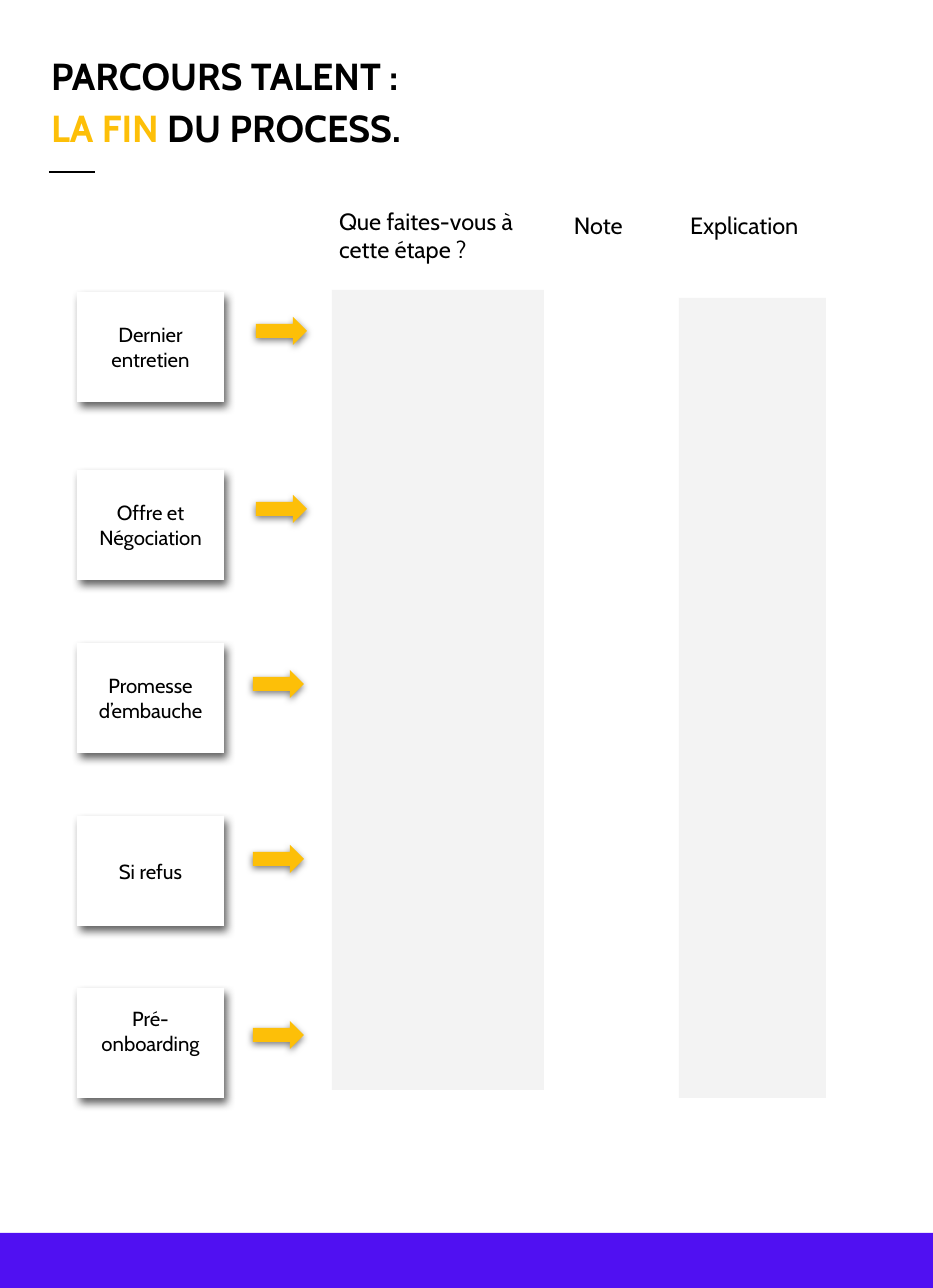
from lxml import etree
from pptx import Presentation
from pptx import util as u
from pptx.dml.color import RGBColor
from pptx.enum import shapes, text
from pptx.oxml import ns

BLACK = RGBColor(0x00, 0x00, 0x00)
WHITE = RGBColor(0xFF, 0xFF, 0xFF)
YELLOW = RGBColor(0xFD, 0xBF, 0x08)
GREY = RGBColor(0xF3, 0xF3, 0xF3)
VIOLET = RGBColor(0x50, 0x10, 0xF2)

PAGE_W, PAGE_H = 933, 1288
SCALE = 914400 / 112.8
INSET = 11
LINE = 24

TITLE = [
    [("PARCOURS TALENT :", BLACK)],
    [("LA FIN ", YELLOW), ("DU PROCESS.", BLACK)],
]
HEADINGS = [
    ("Que faites-vous à cette étape ?", (328, 196, 199, 55)),
    ("Note", (563, 200, 100, 55)),
    ("Explication", (679, 200, 199, 55)),
]
COLUMNS = [(332, 290, 212, 800), (679, 298, 147, 800)]
STEPS = [
    ("Dernier entretien", 292, (256, 317), 0),
    ("Offre et Négociation", 470, (256, 495), 0),
    ("Promesse d’embauche", 643, (253, 670), 0),
    ("Si refus", 816, (253, 845), 0),
    ("Pré-\vonboarding", 988, (253, 1021), LINE),
]
CARD_X, CARD_W, CARD_H = 77, 147, 110
ARROW_W, ARROW_H = 51, 28

CARD_SHADOW = dict(color="434343", alpha=84, blur=5.6, dist=3.8, angle=60)
ARROW_SHADOW = dict(color="000000", alpha=50, blur=4.5, dist=1.5, angle=90)


def px(n):
    return u.Emu(round(n * SCALE))


def assign(obj, values):
    for name, value in values.items():
        setattr(obj, name, value)


def add_shadow(sp, color, alpha, blur, dist, angle):
    effects = sp._element.spPr.find(ns.qn("a:effectLst"))
    outer = etree.SubElement(
        effects, ns.qn("a:outerShdw"), blurRad=str(u.Pt(blur)), dist=str(u.Pt(dist)),
        dir=str(angle * 60000), algn="bl", rotWithShape="0")
    clr = etree.SubElement(outer, ns.qn("a:srgbClr"), val=color)
    etree.SubElement(clr, ns.qn("a:alpha"), val=str(alpha * 1000))


def add_block(s, kind, box, fill, shadow=None):
    sp = s.shapes.add_shape(kind, *map(px, box))
    sp.shadow.inherit = False
    sp.fill.solid()
    sp.fill.fore_color.rgb = fill
    sp.line.fill.background()
    if shadow:
        add_shadow(sp, **shadow)
    return sp


def write(sp, lines, size, bold=False, align=text.PP_ALIGN.LEFT,
          anchor=text.MSO_ANCHOR.TOP, spacing=1.0, extra_bottom=0):
    tf = sp.text_frame
    assign(tf, dict(
        word_wrap=True, auto_size=text.MSO_AUTO_SIZE.NONE, vertical_anchor=anchor,
        margin_left=px(INSET), margin_right=px(INSET), margin_top=px(INSET),
        margin_bottom=px(INSET + extra_bottom)))
    for i, runs in enumerate(lines):
        p = tf.add_paragraph() if i else tf.paragraphs[0]
        assign(p, dict(alignment=align, line_spacing=spacing))
        for words, color in runs:
            for j, part in enumerate(words.split("\v")):
                if j:
                    p.add_line_break()
                r = p.add_run()
                r.text = part
                assign(r.font, dict(name="Cabin", size=u.Pt(size), bold=bold))
                r.font.color.rgb = color


def main():
    prs = Presentation()
    assign(prs, dict(slide_width=px(PAGE_W), slide_height=px(PAGE_H)))
    s = prs.slides.add_slide(prs.slide_layouts[5])
    rect, arrow = shapes.MSO_SHAPE.RECTANGLE, shapes.MSO_SHAPE.RIGHT_ARROW

    title = s.shapes.title
    assign(title, dict(left=px(40), top=px(35), width=px(809), height=px(110)))
    write(title, TITLE, 24, bold=True, spacing=1.15)

    rule = s.shapes.add_connector(
        shapes.MSO_CONNECTOR.STRAIGHT, px(49), px(172), px(95), px(172))
    rule.line.color.rgb = BLACK
    rule.line.width = u.Pt(0.75)
    etree.SubElement(rule._element.spPr, ns.qn("a:effectLst"))

    add_block(s, rect, (0, 1233, PAGE_W, PAGE_H - 1233), VIOLET)
    for box in COLUMNS:
        add_block(s, rect, box, GREY)
    for words, box in HEADINGS:
        write(s.shapes.add_textbox(*map(px, box)), [[(words, BLACK)]], 15)

    for words, top, arrow_at, extra in STEPS:
        card = add_block(s, rect, (CARD_X, top, CARD_W, CARD_H), WHITE, CARD_SHADOW)
        write(card, [[(words, BLACK)]], 13, align=text.PP_ALIGN.CENTER,
              anchor=text.MSO_ANCHOR.MIDDLE, extra_bottom=extra)
        add_block(s, arrow, (*arrow_at, ARROW_W, ARROW_H), YELLOW, ARROW_SHADOW)

    prs.save("out.pptx")


if __name__ == "__main__":
    main()
